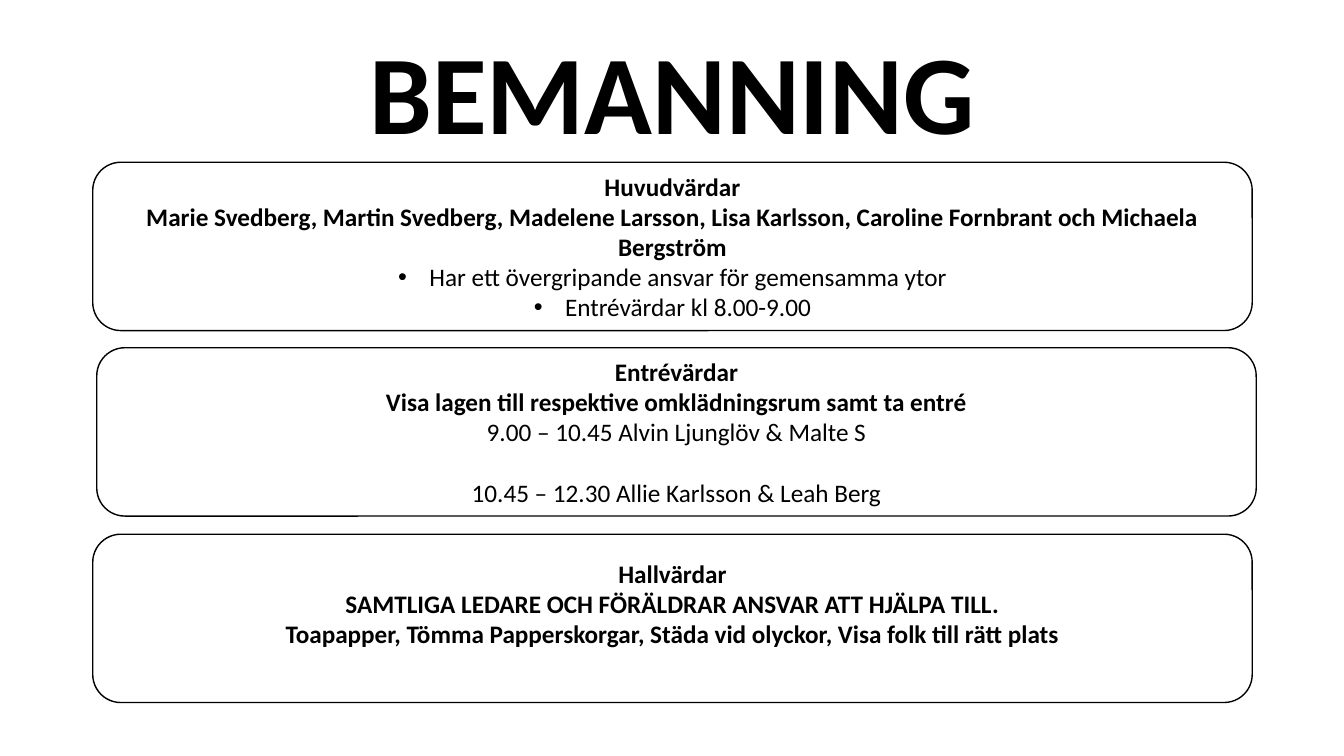
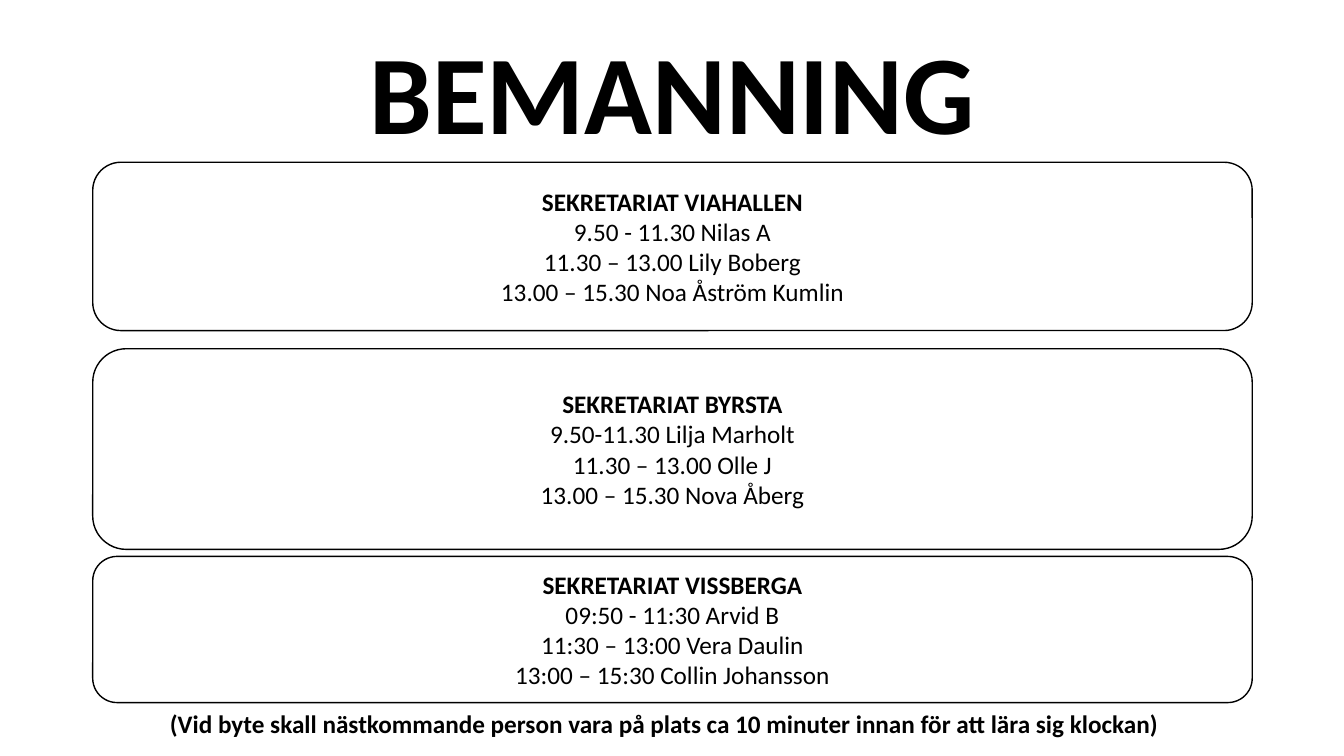
from lxml import etree
from pptx import Presentation
from pptx.dml.color import RGBColor
from pptx.enum import shapes, text
from pptx.oxml.ns import qn
from pptx.util import Pt

PX = 9144  # 100 px to the inch
COLOURS = {"ink": "000000", "paper": "FFFFFF"}
FONT = "Calibri"
TITLE = "BEMANNING"
LEFT, WIDTH = 92, 1150
TITLE_AREA = (LEFT, 32, WIDTH, 145)
INSET, LINE = 5, 30
BULLET_INDENT = 31

# Each panel: left, top, height, bold lines, then plain lines.
# Options: "bullets", "gap" (line preceded by an open line), "lift" (room below)
STAFFING = [
    {
        "panels": [
            {"left": LEFT, "top": 161, "height": 167, "bullets": True,
             "bold": ["Huvudvärdar",
                      "Marie Svedberg, Martin Svedberg, Madelene Larsson, Lisa Karlsson, "
                      "Caroline Fornbrant och Michaela Bergström"],
             "plain": ["Har ett övergripande ansvar för gemensamma ytor",
                       "Entrévärdar kl 8.00-9.00"]},
            {"left": 96, "top": 345, "height": 167, "gap": 3,
             "bold": ["Entrévärdar",
                      "Visa lagen till respektive omklädningsrum samt ta entré"],
             "plain": ["9.00 – 10.45 Alvin Ljunglöv & Malte S",
                       "10.45 – 12.30 Allie Karlsson & Leah Berg"]},
            {"left": LEFT, "top": 530, "height": 167, "lift": LINE,
             "bold": ["Hallvärdar",
                      "SAMTLIGA LEDARE OCH FÖRÄLDRAR ANSVAR ATT HJÄLPA TILL.",
                      "Toapapper, Tömma Papperskorgar, Städa vid olyckor, "
                      "Visa folk till rätt plats"],
             "plain": []},
        ],
    },
    {
        "panels": [
            {"left": LEFT, "top": 161, "height": 167,
             "bold": ["SEKRETARIAT VIAHALLEN"],
             "plain": ["9.50 - 11.30 Nilas A",
                       "11.30 – 13.00 Lily Boberg",
                       "13.00 – 15.30 Noa Åström Kumlin"]},
            {"left": LEFT, "top": 346, "height": 199,
             "bold": ["SEKRETARIAT BYRSTA"],
             "plain": ["9.50-11.30 Lilja Marholt",
                       "11.30 – 13.00 Olle J",
                       "13.00 – 15.30 Nova Åberg"]},
            {"left": LEFT, "top": 552, "height": 145,
             "bold": ["SEKRETARIAT VISSBERGA"],
             "plain": ["09:50 - 11:30 Arvid B",
                       "11:30 – 13:00 Vera Daulin",
                       "13:00 – 15:30 Collin Johansson"]},
        ],
        "note": "(Vid byte skall nästkommande person vara på plats ca 10 minuter "
                "innan för att lära sig klockan)",
    },
]
NOTE_AREA = (LEFT, 698, 1134, 40)


def emu(area):
    return [value * PX for value in area]


def colour(name):
    return RGBColor.from_string(COLOURS[name])


def style(paragraph, size=18, bold=True):
    paragraph.alignment = text.PP_ALIGN.CENTER
    font = paragraph.font
    font.name, font.size, font.bold = FONT, Pt(size), bold
    font.color.rgb = colour("ink")


def add_bullet(paragraph):
    properties = paragraph._p.get_or_add_pPr()
    properties.set("marL", str(BULLET_INDENT * PX))
    properties.set("indent", str(-BULLET_INDENT * PX))
    etree.SubElement(properties, qn("a:buFont"), typeface="Arial")
    etree.SubElement(properties, qn("a:buChar"), char="•")


def add_title(slide):
    title = slide.shapes.title
    title.left, title.top, title.width, title.height = emu(TITLE_AREA)
    frame = title.text_frame
    frame.text = TITLE
    frame.auto_size = text.MSO_AUTO_SIZE.NONE
    frame.vertical_anchor = text.MSO_ANCHOR.TOP
    heading = frame.paragraphs[0]
    heading.line_spacing = 0.9
    style(heading, size=80)


def add_panel(slide, panel):
    area = (panel["left"], panel["top"], WIDTH, panel["height"])
    box = slide.shapes.add_shape(shapes.MSO_SHAPE.ROUNDED_RECTANGLE, *emu(area))
    box.shadow.inherit = False
    box.fill.solid()
    box.fill.fore_color.rgb = colour("paper")
    box.line.color.rgb = colour("ink")
    box.line.width = Pt(1)

    frame = box.text_frame
    frame.word_wrap = True
    frame.vertical_anchor = text.MSO_ANCHOR.MIDDLE
    frame.margin_bottom = (INSET + panel.get("lift", 0)) * PX
    lines = panel["bold"] + panel["plain"]
    frame.text = "\n".join(lines)
    for number, paragraph in enumerate(frame.paragraphs):
        bold = number < len(panel["bold"])
        if panel.get("bullets") and not bold:
            add_bullet(paragraph)
        style(paragraph, bold=bold)
        if number == panel.get("gap"):
            paragraph.space_before = LINE * PX


def add_note(slide, wording):
    frame = slide.shapes.add_textbox(*emu(NOTE_AREA)).text_frame
    frame.word_wrap = True
    frame.text = wording
    style(frame.paragraphs[0])


def main():
    deck = Presentation()
    deck.slide_width, deck.slide_height = emu((1333, 750))
    title_only = deck.slide_layouts[5]
    for page in STAFFING:
        slide = deck.slides.add_slide(title_only)
        add_title(slide)
        for panel in page["panels"]:
            add_panel(slide, panel)
        if "note" in page:
            add_note(slide, page["note"])
    deck.save("out.pptx")


if __name__ == "__main__":
    main()
